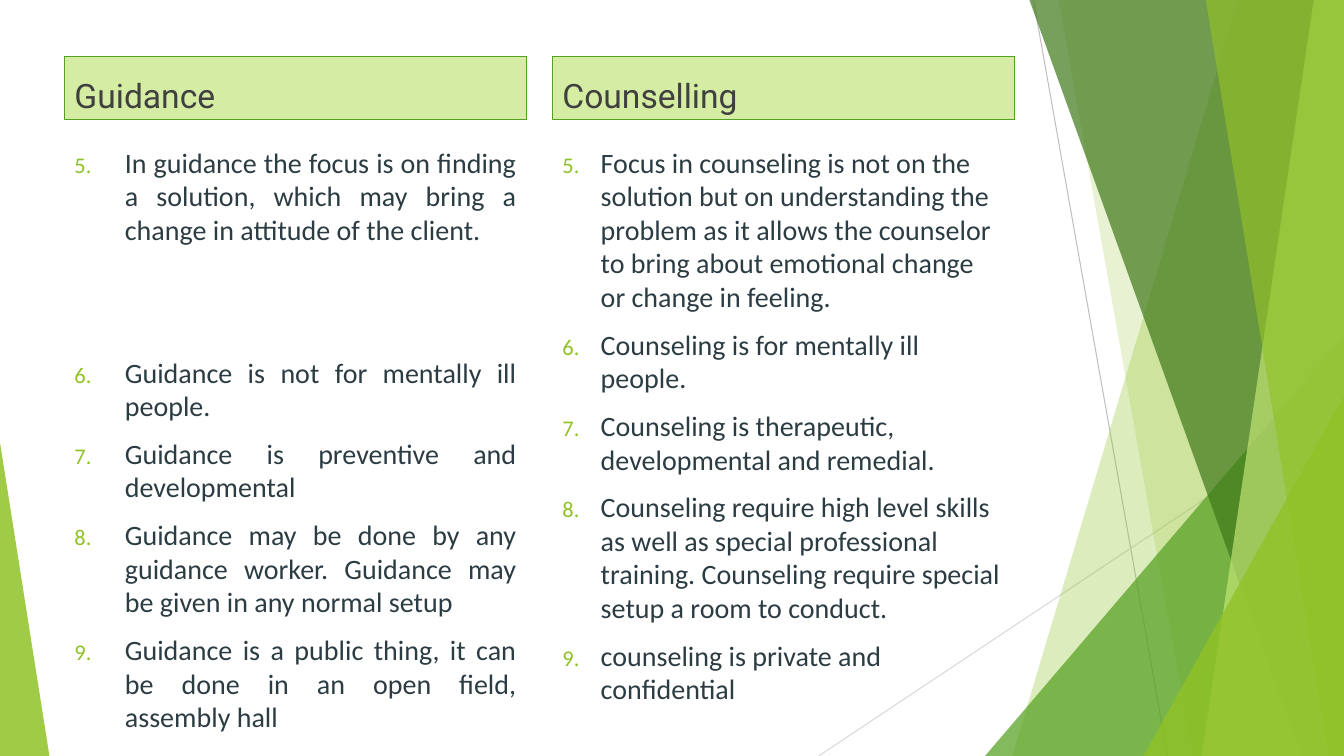
from lxml import etree
from pptx import Presentation
from pptx import util as u
from pptx.dml.color import RGBColor
from pptx.enum import shapes, text
from pptx.oxml.ns import qn

COLORS = {
    "lime": "90C226", "green": "54A021", "forest": "3F7819", "pale": "C0E474",
    "header": "D5EDA2", "heading": "404040", "body": "2C3C43",
    "line": "BFBFBF", "light_line": "D9D9D9",
}
WIDTH, HEIGHT = 13.33, 7.5
COLUMN_WIDTH = 4.58
FIRST_NUMBER = 5


def color(name):
    return RGBColor.from_string(COLORS[name])


class SlideBuilder:
    def __init__(self, slide):
        self.shapes = slide.shapes

    def line(self, start, end, color_name):
        points = [u.Inches(value) for value in (*start, *end)]
        connector = self.shapes.add_connector(shapes.MSO_CONNECTOR.STRAIGHT, *points)
        connector.line.color.rgb = color(color_name)
        connector.line.width = u.Pt(0.75)
        etree.SubElement(connector._element.spPr, qn("a:effectLst"))

    def fill(self, shape, color_name, opacity):
        shape.shadow.inherit = False
        shape.line.fill.background()
        shape.fill.solid()
        shape.fill.fore_color.rgb = color(color_name)
        tint = shape._element.spPr.find(qn("a:solidFill"))[0]
        etree.SubElement(tint, qn("a:alpha"), val=str(opacity * 1000))

    def band(self, top_left, bottom_left, color_name, opacity):
        """Fill the full-height area between a slanted edge and the slide's right side."""
        corners = [(top_left, 0), (WIDTH, 0), (WIDTH, HEIGHT), (bottom_left, HEIGHT)]
        points = [(u.Inches(x), u.Inches(y)) for x, y in corners]
        builder = self.shapes.build_freeform(*points[0])
        builder.add_line_segments(points[1:], close=True)
        self.fill(builder.convert_to_shape(), color_name, opacity)

    def triangle(self, left, top, width, apex, color_name, opacity):
        """Stand a triangle on the slide's bottom edge; apex runs from 0 (left) to 1 (right)."""
        area = [u.Inches(value) for value in (left, top, width, HEIGHT - top)]
        shape = self.shapes.add_shape(shapes.MSO_SHAPE.ISOSCELES_TRIANGLE, *area)
        shape.adjustments[0] = apex
        self.fill(shape, color_name, opacity)

    def span(self, para, wording, font, size, color_name):
        span = para.add_run()
        span.text = wording
        span.font.name = font
        span.font.size = u.Pt(size)
        span.font.color.rgb = color(color_name)

    def header(self, left, wording):
        area = [u.Inches(value) for value in (left, 0.56, COLUMN_WIDTH, 0.63)]
        box = self.shapes.add_shape(shapes.MSO_SHAPE.RECTANGLE, *area)
        box.shadow.inherit = False
        box.fill.solid()
        box.fill.fore_color.rgb = color("header")
        box.line.color.rgb = color("green")
        box.line.width = u.Pt(0.75)
        box.text_frame.vertical_anchor = text.MSO_ANCHOR.BOTTOM
        box.text_frame.word_wrap = True
        para = box.text_frame.paragraphs[0]
        para.alignment = text.PP_ALIGN.LEFT
        para.space_before = u.Pt(10)
        self.span(para, wording, "Roboto", 24, "heading")

    def number(self, para, indent):
        props = para._p.get_or_add_pPr()
        props.set("marL", str(u.Inches(indent)))
        props.set("indent", str(-u.Inches(indent)))
        tint = etree.SubElement(props, qn("a:buClr"))
        etree.SubElement(tint, qn("a:srgbClr"), val=COLORS["lime"])
        etree.SubElement(props, qn("a:buSzPct"), val="80000")
        etree.SubElement(props, qn("a:buFont"), typeface="+mj-lt")
        etree.SubElement(props, qn("a:buAutoNum"), type="arabicPeriod",
                         startAt=str(FIRST_NUMBER))

    def numbered_list(self, left, height, indent, alignment, items):
        """Items are pairs of wording and space before in points."""
        area = [u.Inches(value) for value in (left, 1.39, COLUMN_WIDTH, height)]
        frame = self.shapes.add_textbox(*area).text_frame
        frame.word_wrap = True
        for index, (wording, space) in enumerate(items):
            para = frame.add_paragraph() if index else frame.paragraphs[0]
            para.alignment = alignment
            para.space_before = u.Pt(space)
            self.number(para, indent)
            self.span(para, wording, "Calibri", 20, "body")


GUIDANCE = [
    ("In guidance the focus is on finding a solution, which may bring a change in "
     "attitude of the client.", 10),
    ("Guidance is not for mentally ill people.", 78),
    ("Guidance is preventive and developmental", 10),
    ("Guidance may be done by any guidance worker. Guidance may be given in any "
     "normal setup", 10),
    ("Guidance is a public thing, it can be done in an open field, assembly hall", 10),
]
COUNSELLING = [
    ("Focus in counseling is not on the solution but on understanding the problem as "
     "it allows the counselor to bring about emotional change or change in feeling.", 10),
    ("Counseling is for mentally ill people.", 10),
    ("Counseling is therapeutic, developmental and remedial.", 10),
    ("Counseling require high level skills as well as special professional training. "
     "Counseling require special setup a room to conduct.", 10),
    ("counseling is private and confidential", 10),
]


def main():
    deck = Presentation()
    deck.slide_width, deck.slide_height = u.Inches(WIDTH), u.Inches(HEIGHT)
    page = SlideBuilder(deck.slides.add_slide(deck.slide_layouts[6]))

    page.line((10.25, 0), (11.58, HEIGHT), "line")
    page.line((WIDTH, 4.03), (8.12, HEIGHT), "light_line")
    page.band(12.28, 10.04, "lime", 30)
    page.band(10.5, 11.83, "lime", 20)
    page.triangle(9.77, 3.33, 3.56, 1, "green", 72)
    page.band(10.21, 12.91, "forest", 70)
    page.band(13.03, 11.92, "pale", 70)
    page.band(11.96, 13.18, "lime", 65)
    page.triangle(11.34, 3.93, 1.99, 1, "lime", 80)
    page.triangle(0, 4.39, 0.49, 0, "lime", 85)

    page.header(0.64, "Guidance")
    page.header(5.48, "Counselling")
    page.numbered_list(0.64, 5.8, 0.5, text.PP_ALIGN.JUSTIFY, GUIDANCE)
    page.numbered_list(5.48, 5.91, 0.38, text.PP_ALIGN.LEFT, COUNSELLING)
    deck.save("out.pptx")


if __name__ == "__main__":
    main()
